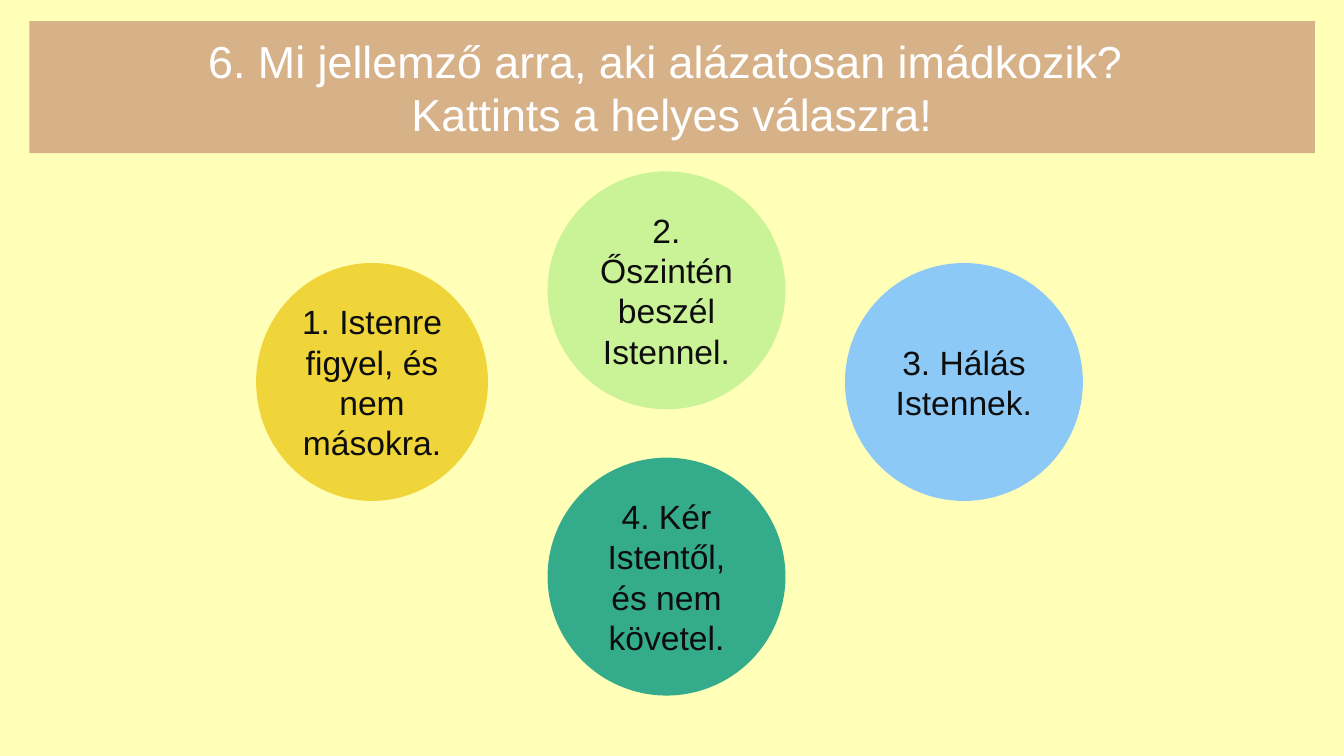
from dataclasses import dataclass

from pptx import Presentation
from pptx.dml.color import RGBColor as Rgb
from pptx.enum.shapes import MSO_SHAPE as Preset
from pptx.enum.text import MSO_ANCHOR as Anchor, PP_ALIGN as Align
from pptx.util import Inches, Pt


@dataclass(frozen=True)
class Theme:
    font: str = "Arial"
    background: str = "FFFFB7"
    banner: str = "D7B289"
    question_ink: str = "FFFFFF"
    answer_ink: str = "0D0D0D"
    yellow: str = "EFD539"
    lime: str = "CAF297"
    blue: str = "8CC9F7"
    green: str = "34AC8B"
    question_size: int = 32
    answer_size: int = 24


THEME = Theme()
SLIDE_WIDTH, SLIDE_HEIGHT = Inches(13.33), Inches(7.5)

BANNER_AREA = (2.18, 2.8, 95.65, 17.47)
QUESTION = ["6. Mi jellemző arra, aki alázatosan imádkozik? ", "Kattints a helyes válaszra!"]

COLUMN_CENTERS = {"left": 27.68, "middle": 49.59, "right": 71.72}
ROW_CENTERS = {"top": 38.4, "middle": 50.53, "bottom": 76.27}
CIRCLE_WIDTH, CIRCLE_HEIGHT = 17.7, 31.47
ANSWERS = [
    ("4. Kér Istentől, és nem követel.", "middle", "bottom", CIRCLE_WIDTH, THEME.green),
    ("2. Őszintén beszél Istennel.", "middle", "top", CIRCLE_WIDTH, THEME.lime),
    ("3. Hálás Istennek.", "right", "middle", CIRCLE_WIDTH, THEME.blue),
    ("1. Istenre figyel, és nem másokra.", "left", "middle", 17.25, THEME.yellow),
]


def apply_format(target, values):
    for attribute, value in values.items():
        setattr(target, attribute, value)


def share_to_lengths(area):
    extents = (SLIDE_WIDTH, SLIDE_HEIGHT) * 2
    return [round(extent * share / 100) for extent, share in zip(extents, area)]


def paint_background(slide):
    fill = slide.background.fill
    fill.solid()
    fill.fore_color.rgb = Rgb.from_string(THEME.background)


def add_panel(slide, preset, area, color, lines, size, ink):
    panel = slide.shapes.add_shape(preset, *share_to_lengths(area))
    panel.shadow.inherit = False
    panel.fill.solid()
    panel.fill.fore_color.rgb = Rgb.from_string(color)
    panel.line.fill.background()
    frame = panel.text_frame
    apply_format(frame, {"word_wrap": True, "vertical_anchor": Anchor.MIDDLE})
    frame.text = "\n".join(lines)
    for paragraph in frame.paragraphs:
        paragraph.alignment = Align.CENTER
        for run in paragraph.runs:
            apply_format(run.font, {"name": THEME.font, "size": Pt(size)})
            run.font.color.rgb = Rgb.from_string(ink)


def add_question(slide):
    add_panel(slide, Preset.RECTANGLE, BANNER_AREA, THEME.banner,
              QUESTION, THEME.question_size, THEME.question_ink)


def add_answer(slide, answer, column, row, width, color):
    left = COLUMN_CENTERS[column] - width / 2
    top = ROW_CENTERS[row] - CIRCLE_HEIGHT / 2
    add_panel(slide, Preset.OVAL, (left, top, width, CIRCLE_HEIGHT), color,
              [answer], THEME.answer_size, THEME.answer_ink)


def main():
    deck = Presentation()
    apply_format(deck, {"slide_width": SLIDE_WIDTH, "slide_height": SLIDE_HEIGHT})
    slide = deck.slides.add_slide(deck.slide_layouts[6])
    paint_background(slide)
    add_question(slide)
    for answer in ANSWERS:
        add_answer(slide, *answer)
    deck.save("out.pptx")


if __name__ == "__main__":
    main()
